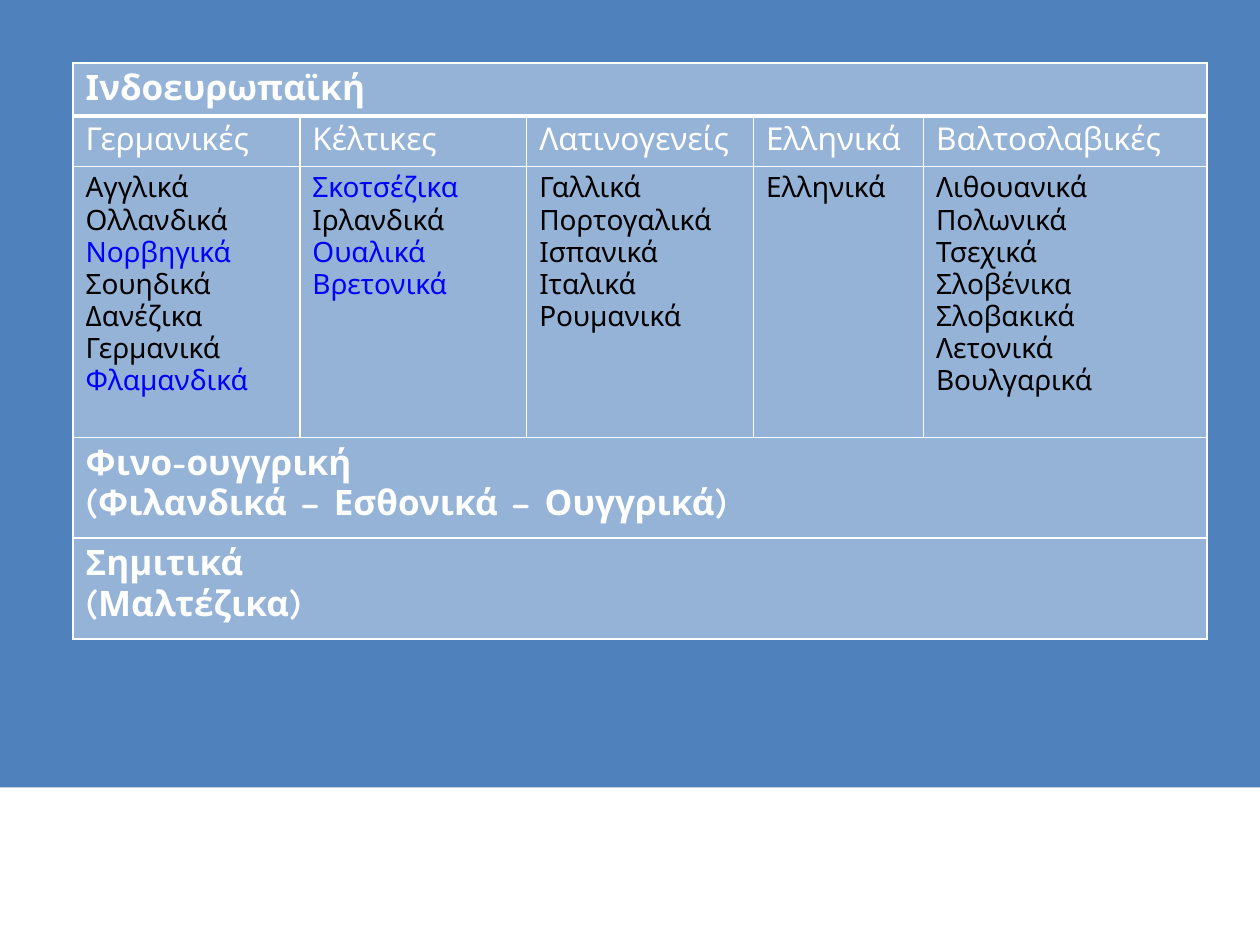
from dataclasses import dataclass

from lxml import etree
from pptx import Presentation
from pptx.dml.color import RGBColor
from pptx.enum.shapes import MSO_SHAPE
from pptx.enum.text import PP_ALIGN
from pptx.oxml.ns import qn
from pptx.util import Inches, Pt

RECTANGLE = MSO_SHAPE.RECTANGLE
JUSTIFY = PP_ALIGN.JUSTIFY


@dataclass(frozen=True)
class Theme:
    font: str = "Comic Neue"
    family_size: int = 20
    branch_size: int = 18
    language_size: int = 16
    band: str = "4F81BD"
    cell: str = "95B3D7"
    light: str = "FFFFFF"
    dark: str = "000000"
    accent: str = "0000FF"
    border: float = 1
    heading_border: float = 3


COLUMN_WIDTHS = [1.8, 1.8, 1.8, 1.35, 2.25]
ROW_HEIGHTS = [0.42, 0.4, 2.15, 0.8, 0.8]
BRANCHES = {
    "Γερμανικές": ["Αγγλικά", "Ολλανδικά", "Νορβηγικά", "Σουηδικά",
                   "Δανέζικα", "Γερμανικά", "Φλαμανδικά"],
    "Κέλτικες": ["Σκοτσέζικα", "Ιρλανδικά", "Ουαλικά", "Βρετονικά"],
    "Λατινογενείς": ["Γαλλικά", "Πορτογαλικά", "Ισπανικά", "Ιταλικά",
                     "Ρουμανικά"],
    "Ελληνικά": ["Ελληνικά"],
    "Βαλτοσλαβικές": ["Λιθουανικά", "Πολωνικά", "Τσεχικά", "Σλοβένικα",
                      "Σλοβακικά", "Λετονικά", "Βουλγαρικά"],
}
HIGHLIGHTED = {"Νορβηγικά", "Φλαμανδικά", "Σκοτσέζικα", "Ουαλικά",
               "Βρετονικά"}
# Row number of each language family and its lines
FAMILIES = {
    0: ["Ινδοευρωπαϊκή"],
    3: ["Φινο-ουγγρική", "(Φιλανδικά – Εσθονικά – Ουγγρικά)"],
    4: ["Σημιτικά", "(Μαλτέζικα)"],
}


class SlideBuilder:
    def __init__(self, slide, theme):
        self.slide = slide
        self.theme = theme

    def band(self, left, top, width, height):
        band = self.slide.shapes.add_shape(
            RECTANGLE, Inches(left), Inches(top), Inches(width), Inches(height))
        band.shadow.inherit = False
        band.fill.solid()
        band.fill.fore_color.rgb = RGBColor.from_string(self.theme.band)
        band.line.fill.background()

    def table(self, left, top, widths, heights):
        table = self.slide.shapes.add_table(
            len(heights), len(widths), Inches(left), Inches(top),
            Inches(sum(widths)), Inches(sum(heights))).table
        table.first_row = table.horz_banding = False
        for column, width in zip(table.columns, widths):
            column.width = Inches(width)
        for row, height in zip(table.rows, heights):
            row.height = Inches(height)
        for row_number in range(len(heights)):
            for column_number in range(len(widths)):
                self.cell_style(table.cell(row_number, column_number), row_number)
        return table

    def cell_style(self, cell, row_number):
        theme = self.theme
        borders = dict.fromkeys(("lnL", "lnR", "lnT", "lnB"), theme.border)
        # The heavy rule lies between the first two rows
        if row_number == 0:
            borders["lnB"] = theme.heading_border
        elif row_number == 1:
            borders["lnT"] = theme.heading_border
        properties = cell._tc.get_or_add_tcPr()
        for side, weight in borders.items():
            line = etree.SubElement(properties, qn(f"a:{side}"), w=str(Pt(weight)))
            fill = etree.SubElement(line, qn("a:solidFill"))
            etree.SubElement(fill, qn("a:srgbClr"), val=theme.light)
        cell.fill.solid()
        cell.fill.fore_color.rgb = RGBColor.from_string(theme.cell)

    def cell_text(self, cell, lines, size, color, bold=False):
        frame = cell.text_frame
        for number, line in enumerate(lines):
            paragraph = frame.add_paragraph() if number else frame.paragraphs[0]
            run = paragraph.add_run()
            run.text = line
            run.font.name = self.theme.font
            run.font.size = Pt(size)
            run.font.bold = bold
            run.font.color.rgb = RGBColor.from_string(
                self.theme.accent if line in HIGHLIGHTED else color)


def main():
    deck = Presentation()
    deck.slide_width, deck.slide_height = Inches(10), Inches(7.5)
    theme = Theme()
    builder = SlideBuilder(deck.slides.add_slide(deck.slide_layouts[6]), theme)

    # Background band
    builder.band(0, 0, 10, 6.25)

    # Language table
    languages = builder.table(0.58, 0.5, COLUMN_WIDTHS, ROW_HEIGHTS)

    # Family rows across the whole table
    last_column = len(COLUMN_WIDTHS) - 1
    for row, lines in FAMILIES.items():
        family = languages.cell(row, 0)
        family.merge(languages.cell(row, last_column))
        builder.cell_text(family, lines, theme.family_size, theme.light, bold=True)
    languages.cell(4, 0).text_frame.paragraphs[0].alignment = JUSTIFY

    # Indo-European branches with their languages
    for column, (branch, members) in enumerate(BRANCHES.items()):
        builder.cell_text(languages.cell(1, column), [branch],
                          theme.branch_size, theme.light)
        builder.cell_text(languages.cell(2, column), members,
                          theme.language_size, theme.dark)

    deck.save("out.pptx")


if __name__ == "__main__":
    main()
